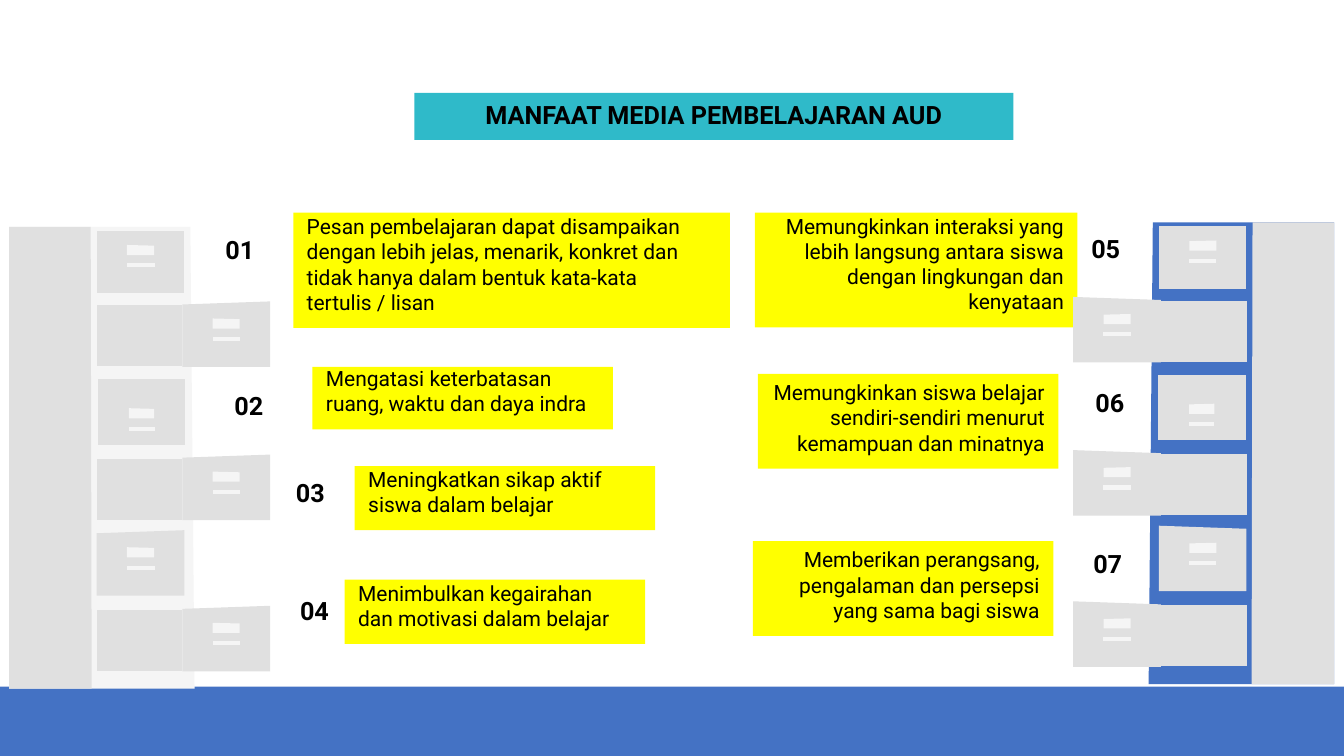
"""Build the slide on the benefits of learning media, framed by two drawer cabinets."""
import pptx
import pptx.dml.color
import pptx.enum.shapes
import pptx.enum.text
import pptx.util

Pt = pptx.util.Pt
ALIGN = pptx.enum.text.PP_ALIGN
ANCHOR = pptx.enum.text.MSO_ANCHOR
RECTANGLE = pptx.enum.shapes.MSO_SHAPE.RECTANGLE

COLOURS = {
    "floor": "4472C4",
    "title": "2FBAC9",
    "note": "FFFF00",
    "text": "000000",
    "drawer": "E0E0E0",
    "pale": "F5F5F5",
}
FONT = "Roboto"
WIDTH, HEIGHT = 960, 540
MIRROR_WIDTH = 959.5

BENEFITS = [
    ("01", (136.8, 157.7), (209.5, 151.9, 311.8, 82.4), ALIGN.LEFT,
     "Pesan pembelajaran dapat disampaikan dengan lebih jelas, menarik, konkret dan "
     "tidak hanya dalam bentuk kata-kata tertulis / lisan"),
    ("02", (143.3, 269.3), (223.2, 262.1, 214.6, 44.6), ALIGN.LEFT,
     "Mengatasi keterbatasan ruang, waktu dan daya indra"),
    ("03", (187.2, 331.2), (253.4, 333, 214.6, 45.6), ALIGN.LEFT,
     "Meningkatkan sikap aktif siswa dalam belajar"),
    ("04", (190.1, 415.4), (246.2, 414, 214.6, 46), ALIGN.LEFT,
     "Menimbulkan kegairahan dan motivasi dalam belajar"),
    ("05", (755.3, 157), (539.3, 151.9, 230.4, 82), ALIGN.RIGHT,
     "Memungkinkan interaksi yang lebih langsung antara siswa dengan lingkungan dan kenyataan"),
    ("06", (758.2, 267.1), (541.4, 267.1, 214.6, 67.7), ALIGN.RIGHT,
     "Memungkinkan siswa belajar sendiri-sendiri menurut kemampuan dan minatnya"),
    ("07", (756.7, 382.3), (537.8, 386.6, 214.6, 67.7), ALIGN.RIGHT,
     "Memberikan perangsang, pengalaman dan persepsi yang sama bagi siswa"),
]

OPEN_DRAWER_TOPS = (215.3, 324.7, 432.7)


def fill_shape(shape, colour):
    """Give a shape a plain fill with no outline or shadow."""
    shape.shadow.inherit = False
    shape.fill.solid()
    shape.fill.fore_color.rgb = pptx.dml.color.RGBColor.from_string(COLOURS[colour])
    shape.line.fill.background()


def write_text(shape, text, size, align, anchor, bold=False):
    """Set the single paragraph of a shape."""
    frame = shape.text_frame
    frame.word_wrap = True
    frame.vertical_anchor = anchor
    frame.margin_left = frame.margin_right = Pt(9.6)
    frame.margin_top = frame.margin_bottom = Pt(9.6)
    paragraph = frame.paragraphs[0]
    paragraph.text = text
    paragraph.alignment = align
    paragraph.font.name = FONT
    paragraph.font.size = Pt(size)
    paragraph.font.bold = bold
    paragraph.font.color.rgb = pptx.dml.color.RGBColor.from_string(COLOURS["text"])
    return paragraph


def add_box(slide, box, colour):
    """Add a filled rectangle."""
    shape = slide.shapes.add_shape(RECTANGLE, *map(Pt, box))
    fill_shape(shape, colour)
    return shape


def add_number(slide, position, text):
    """Add the bold number beside a note."""
    shape = slide.shapes.add_textbox(*map(Pt, (*position, 69.1, 86.4)))
    write_text(shape, text, 18, ALIGN.CENTER, ANCHOR.TOP, bold=True)


def add_panel(group, points, colour, mirrored, shift):
    """Add a four-cornered cabinet part, flipped across the slide if mirrored."""
    corners = [(Pt(MIRROR_WIDTH - x if mirrored else x), Pt(y + shift)) for x, y in points]
    builder = group.shapes.build_freeform(*corners[0], scale=1.0)
    builder.add_line_segments(corners[1:], close=True)
    fill_shape(builder.convert_to_shape(), colour)


def corners_of(left, top, width, height, left_drop=0, right_drop=0):
    """Return the corners of a box whose top corners may be lowered."""
    right, bottom = left + width, top + height
    return [(left, top + left_drop), (left, bottom), (right, bottom), (right, top + right_drop)]


def add_cabinet(slide, body_colour, mirrored=False, shift=0):
    """Add a cabinet with three closed and three open drawers."""
    group = slide.shapes.add_group_shape()

    def panel(points, colour):
        """Add one part of this cabinet."""
        add_panel(group, points, colour, mirrored, shift)

    def drawer(left, top, height, drop, label_left, label_top, label_width):
        """Add a drawer front with its label and handle."""
        panel(corners_of(left, top, 62.6, height, left_drop=drop), "drawer")
        label = (left + label_left, top + label_top, label_width, 7.2)
        panel(corners_of(*label, right_drop=0.5), "pale")
        panel(corners_of(left + label_left, top + label_top + 13.1, label_width + 0.4, 2.9), "pale")

    panel([(6.5, 162), (6.5, 491.8), (139, 491.8), (136, 162)], body_colour)
    panel([(6.5, 162), (6.5, 491.8), (65.5, 491.8), (64.8, 162)], "drawer")
    drawer(69.1, 164.9, 44.6, 0, 21.6, 10.1, 19.3)
    drawer(69.8, 270.7, 46.8, 0, 22.3, 20.9, 18)
    drawer(69.1, 378.7, 46.8, 2.2, 21.6, 12.2, 19.3)
    for top in OPEN_DRAWER_TOPS:
        drawer(130.3, top, 46.8, 2.2, 21.6, 12.2, 19.3)
        panel(corners_of(69.1, top + 2.9, 61.2, 43.6), "drawer")


def main():
    """Build and save the slide."""
    presentation = pptx.Presentation()
    presentation.slide_width, presentation.slide_height = Pt(WIDTH), Pt(HEIGHT)
    slide = presentation.slides.add_slide(presentation.slide_layouts[6])

    add_box(slide, (0, 490.4, WIDTH, HEIGHT - 490.4), "floor")
    title = add_box(slide, (295.9, 66.4, 428, 33.6), "title")
    heading = write_text(title, "MANFAAT MEDIA PEMBELAJARAN AUD", 18,
                         ALIGN.CENTER, ANCHOR.MIDDLE, bold=True)
    heading.line_spacing = 0.9
    for number, position, box, align, text in BENEFITS:
        add_number(slide, position, number)
        note = add_box(slide, box, "note")
        write_text(note, text, 15, align, ANCHOR.BOTTOM)
    add_cabinet(slide, "floor", mirrored=True, shift=-3.2)
    add_cabinet(slide, "pale")

    presentation.save("out.pptx")


if __name__ == "__main__":
    main()
